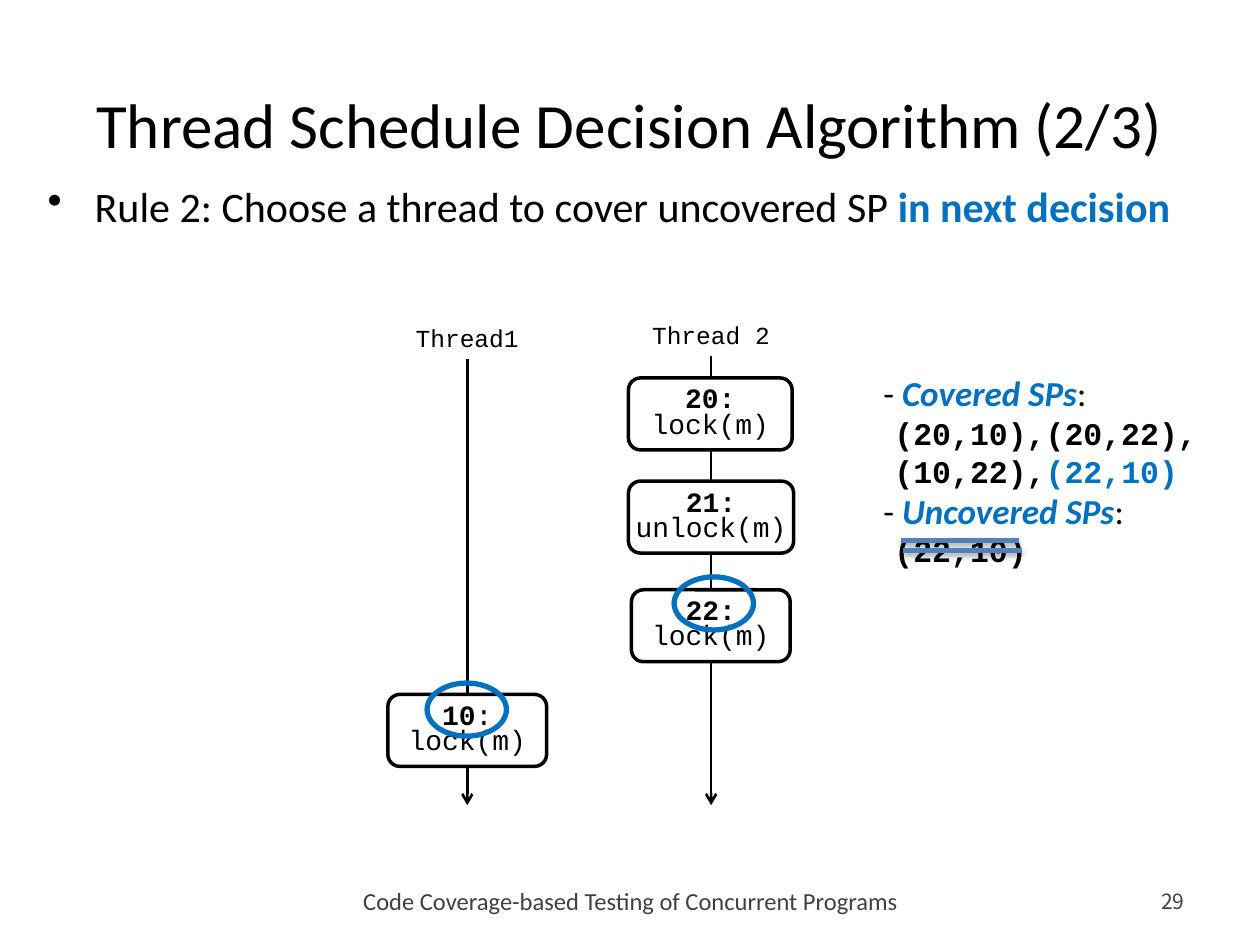
from lxml import etree
from pptx import Presentation, util as u
from pptx.dml.color import RGBColor
from pptx.enum import shapes, text
from pptx.oxml import parse_xml
from pptx.oxml.ns import nsdecls, qn

BLACK, GREY, BLUE, STEEL = "000000", "404040", "0070C0", "4F81BD"
SANS, MONO = "Calibri", "Courier New"
LEFT, CENTER, RIGHT = text.PP_ALIGN.LEFT, text.PP_ALIGN.CENTER, text.PP_ALIGN.RIGHT


def color(value):
    return RGBColor.from_string(value)


def cm(*values):
    return [u.Cm(v) for v in values]


def add_paragraph(tf, runs, size, font=SANS, fill=BLACK, align=LEFT, first=False):
    p = tf.paragraphs[0] if first else tf.add_paragraph()
    p.alignment = align
    p.font.size = u.Pt(size)
    p.font.name = font
    p.font.color.rgb = color(fill)
    for content, style in runs:
        r = p.add_run()
        r.text = content
        if "b" in style:
            r.font.bold = True
        if "i" in style:
            r.font.italic = True
        if "c" in style:
            r.font.color.rgb = color(BLUE)
    return p


def add_text(s, box, paragraphs, middle=False, **style):
    sp = s.shapes.add_textbox(*cm(*box))
    tf = sp.text_frame
    tf.word_wrap = True
    if middle:
        tf.vertical_anchor = text.MSO_ANCHOR.MIDDLE
    else:
        tf.auto_size = text.MSO_AUTO_SIZE.SHAPE_TO_FIT_TEXT
    for i, (runs, own) in enumerate(paragraphs):
        add_paragraph(tf, runs, first=i == 0, **{**style, **own})
    return sp


def add_label(s, box, content, **style):
    return add_text(s, box, [([(content, "")], {})], **style)


def add_bullet(p):
    pPr = p._p.get_or_add_pPr()
    pPr.set("marL", str(u.Cm(0.95)))
    pPr.set("indent", str(-u.Cm(0.95)))
    bullet = parse_xml(f'<a:buChar {nsdecls("a")} char="•"/>')
    pPr.insert_element_before(bullet, "a:tabLst", "a:defRPr", "a:extLst")


def add_line(s, ends, fill, width):
    cx = s.shapes.add_connector(shapes.MSO_CONNECTOR.STRAIGHT, *cm(*ends))
    cx.line.color.rgb = color(fill)
    cx.line.width = u.Pt(width)
    effects = etree.SubElement(cx._element.spPr, qn("a:effectLst"))
    return cx, effects


def add_timeline(s, label, x, bottom):
    cx, _ = add_line(s, (x, bottom, x, 16.23), BLACK, 1.5)
    cx.begin_connect(label, 2)
    etree.SubElement(cx.line._get_or_add_ln(), qn("a:tailEnd"), type="arrow")


def add_strike(s, x, y):
    _, effects = add_line(s, (x, y, x + 2.39, y), STEEL, 3)
    effects.append(parse_xml(
        f'<a:outerShdw {nsdecls("a")} blurRad="40000" dist="23000" dir="5400000" '
        'rotWithShape="0"><a:srgbClr val="000000"><a:alpha val="35000"/>'
        '</a:srgbClr></a:outerShdw>'))


def add_outline(s, kind, box, line, width, fill=None):
    sp = s.shapes.add_shape(kind, *cm(*box))
    sp.shadow.inherit = False
    if fill:
        sp.fill.solid()
        sp.fill.fore_color.rgb = color(fill)
    else:
        sp.fill.background()
    sp.line.color.rgb = color(line)
    sp.line.width = u.Pt(width)
    return sp


def add_step(s, x, y, width, number, call):
    sp = add_outline(s, shapes.MSO_SHAPE.ROUNDED_RECTANGLE, (x, y, width, 1.45),
                     BLACK, 2, "FFFFFF")
    tf = sp.text_frame
    tf.margin_left = tf.margin_right = tf.margin_top = tf.margin_bottom = 0
    tf.vertical_anchor = text.MSO_ANCHOR.MIDDLE
    for i, runs in enumerate((number, [(call, "")])):
        p = add_paragraph(tf, runs, 16, MONO, align=CENTER, first=i == 0)
        p.line_spacing = 0.75


def add_pair_list(s):
    def heading(name):
        return [(" - ", ""), (name, "bic"), (":", "")], {"size": 20, "font": SANS}

    add_text(s, (17.4, 7.37, 8.1, 4.27), [
        heading("Covered SPs"),
        ([(" (20,10),(20,22),", "b")], {}),
        ([(" (10,22),", "b"), ("(22,10)", "bc")], {}),
        heading("Uncovered SPs"),
        ([(" (22,10)", "b")], {}),
    ], size=18, font=MONO)


def main():
    prs = Presentation()
    prs.slide_width, prs.slide_height = cm(25.4, 19.05)
    s = prs.slides.add_slide(prs.slide_layouts[6])

    add_label(s, (4.09, 17.65, 17.25, 1.02), "Code Coverage-based Testing of Concurrent Programs",
              size=14, fill=GREY, align=CENTER, middle=True)
    add_label(s, (22.71, 17.65, 1.42, 1.02), "29", size=12, font="Noto Sans CJK KR",
              fill=GREY, align=RIGHT, middle=True)
    add_label(s, (0, 1.52, 25.37, 1.93), "Thread Schedule Decision Algorithm (2/3)",
              size=36, align=CENTER, middle=True)
    rule = add_text(s, (0.71, 3.51, 24, 1.27), [
        ([("Rule 2: Choose a thread to cover uncovered SP ", ""),
          ("in next decision", "bc")], {})], size=24)
    add_bullet(rule.text_frame.paragraphs[0])

    for name, x, y, width in (("Thread1", 7.82, 6.38, 3.2), ("Thread 2", 12.67, 6.32, 3.33)):
        label = add_label(s, (x, y, width, 0.86), name, size=14, font=MONO, align=CENTER)
        add_timeline(s, label, x + width / 2, y + 0.86)

    add_step(s, 7.82, 14, 3.2, [("10", "b"), (":", "")], "lock(m)")
    add_step(s, 12.67, 7.62, 3.3, [("20:", "b")], "lock(m)")
    add_step(s, 12.67, 9.7, 3.33, [("21:", "b")], "unlock(m)")
    add_step(s, 12.73, 11.89, 3.2, [("22:", "b")], "lock(m)")

    add_pair_list(s)
    for x, y in ((18.16, 10.9), (18.21, 11.1)):
        add_strike(s, x, y)
    for x, y in ((8.61, 13.77), (13.59, 11.63)):
        add_outline(s, shapes.MSO_SHAPE.OVAL, (x, y, 1.6, 1.07), BLUE, 3)

    prs.save("out.pptx")


if __name__ == "__main__":
    main()
